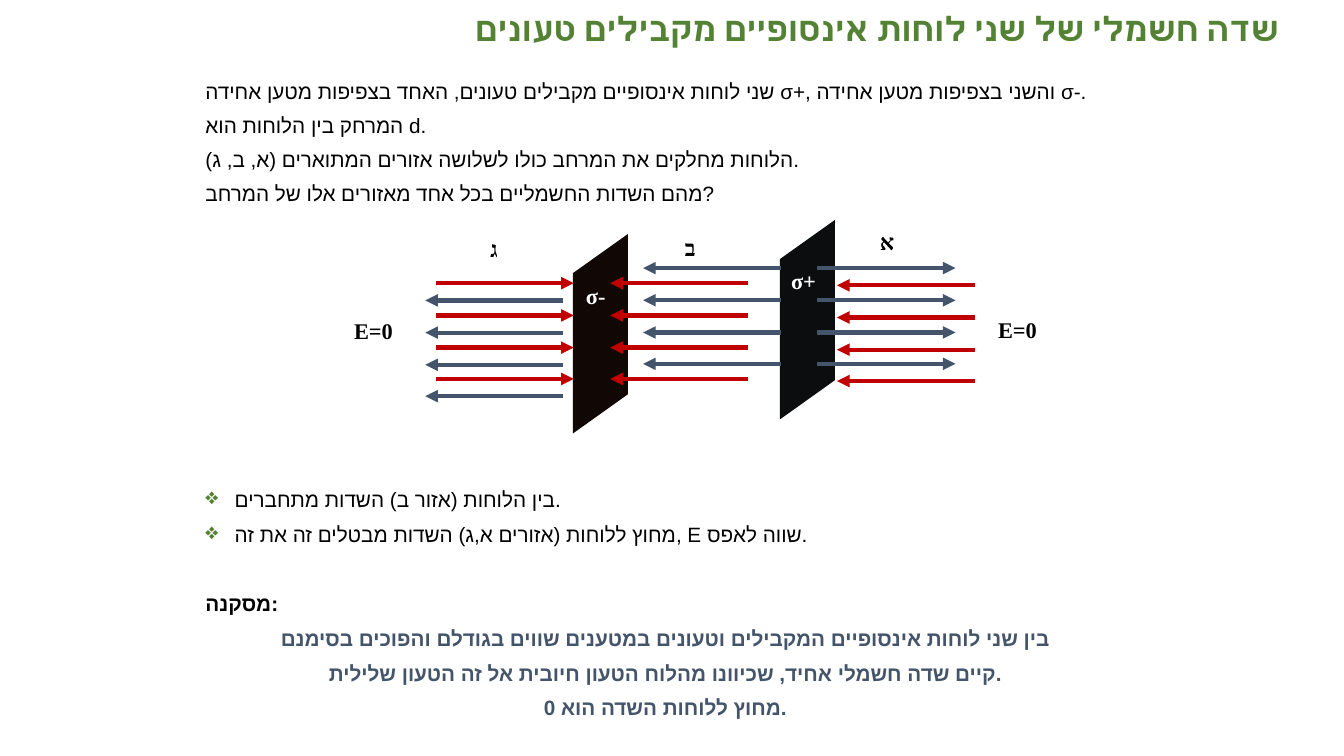
import pptx
import pptx.dml.color
import pptx.enum.shapes
import pptx.enum.text
import pptx.util
from dataclasses import dataclass
from lxml import etree
from pptx.oxml.ns import qn

Pt = pptx.util.Pt
ALIGN = pptx.enum.text.PP_ALIGN
ANCHOR = pptx.enum.text.MSO_ANCHOR


@dataclass(frozen=True)
class Theme:
    green: str = "548235"
    slate: str = "44546A"
    red: str = "C00000"
    black: str = "000000"
    white: str = "FFFFFF"
    positive_plate: str = "0B0D0F"
    negative_plate: str = "110806"
    title_font: str = "Calibri"
    body_font: str = "Arial"
    label_font: str = "Times New Roman"
    title_size: float = 24
    body_size: float = 14.8
    label_size: float = 16


THEME = Theme()

ARROW_LENGTH = 98.6
ARROW_ROWS = (0, 23, 46, 68.4)
PLATE_WIDTH, PLATE_HEIGHT, PLATE_RISE = 39.3, 114.5, 28

QUESTION = (
    "שני לוחות אינסופיים מקבילים טעונים, האחד בצפיפות מטען אחידה σ+, והשני בצפיפות מטען אחידה σ-.",
    "המרחק בין הלוחות הוא d.",
    "הלוחות מחלקים את המרחב כולו לשלושה אזורים המתוארים (א, ב, ג).",
    "מהם השדות החשמליים בכל אחד מאזורים אלו של המרחב?",
)
FINDINGS = (
    "בין הלוחות (אזור ב) השדות מתחברים.",
    "מחוץ ללוחות (אזורים א,ג) השדות מבטלים זה את זה, E שווה לאפס.",
)
CONCLUSIONS = (
    "בין שני לוחות אינסופיים המקבילים וטעונים במטענים שווים בגודלם והפוכים בסימנם",
    "קיים שדה חשמלי אחיד, שכיוונו מהלוח הטעון חיובית אל זה הטעון שלילית.",
    "מחוץ ללוחות השדה הוא 0.",
)

# left, top, colour, direction (1 points right, -1 points left)
FIELDS = (
    (583.9, 191.5, THEME.slate, 1),
    (459.4, 191.5, THEME.slate, -1),
    (303.8, 214.6, THEME.slate, -1),
    (435.9, 202.3, THEME.red, -1),
    (311.2, 202.3, THEME.red, 1),
    (597.8, 203.8, THEME.red, -1),
)

# text, left, top, width, height, colour
LABELS = (
    ("+σ", 535, 187.2, 77.8, 43.9, THEME.white),
    ("-σ", 386.6, 198, 77.8, 43.9, THEME.white),
    ("E=0", 696.2, 222.5, 61.2, 25.9, THEME.black),
    ("E=0", 241.9, 223.2, 49.7, 39.6, THEME.black),
    ("א", 614.2, 159.1, 38.9, 25.9, THEME.black),
    ("ב", 465.8, 163.4, 54.7, 44.6, THEME.black),
    ("ג", 333.4, 164.2, 38.9, 25.9, THEME.black),
)


def rgb(colour):
    return pptx.dml.color.RGBColor.from_string(colour)


def add_frame(slide, left, top, width, height, anchor=ANCHOR.TOP):
    box = slide.shapes.add_textbox(Pt(left), Pt(top), Pt(width), Pt(height))
    frame = box.text_frame
    frame.word_wrap = True
    frame.vertical_anchor = anchor
    return frame


def next_paragraph(frame):
    first = frame.paragraphs[0]
    return frame.add_paragraph() if first.runs else first


def write(frame, text, font, size, colour, bold=False, align=ALIGN.LEFT, spacing=1.0, before=0):
    paragraph = next_paragraph(frame)
    paragraph.alignment = align
    paragraph.line_spacing = spacing
    paragraph.space_before = Pt(before)
    run = paragraph.add_run()
    run.text = text
    run.font.name = font
    run.font.size = Pt(size)
    run.font.bold = bold
    run.font.color.rgb = rgb(colour)
    # Hebrew letters take their typeface from the complex-script entry.
    etree.SubElement(run.font._element, qn("a:cs"), typeface=font)
    return paragraph


def add_bullet(paragraph):
    properties = paragraph._p.get_or_add_pPr()
    properties.set("marL", str(Pt(20.9)))
    properties.set("indent", str(-Pt(20.9)))
    colour = etree.SubElement(properties, qn("a:buClr"))
    etree.SubElement(colour, qn("a:srgbClr"), val=THEME.green)
    etree.SubElement(properties, qn("a:buSzPct"), val="110000")
    etree.SubElement(properties, qn("a:buChar"), char="❖")


def add_title(slide):
    frame = add_frame(slide, 114.5, 7.9, 806.4, 28.1, ANCHOR.MIDDLE)
    write(frame, "שדה חשמלי של שני לוחות אינסופיים מקבילים טעונים", THEME.title_font,
          THEME.title_size, THEME.green, bold=True, align=ALIGN.RIGHT, spacing=0.9)


def add_body(slide):
    frame = add_frame(slide, 139.7, 56.2, 671, 475.2)

    def line(text, colour=THEME.black, **options):
        return write(frame, text, THEME.body_font, THEME.body_size, colour, **options)

    for text in QUESTION:
        line(text, spacing=0.8, before=10)
    for text, gap in zip(FINDINGS, (194, 0)):
        add_bullet(line(text, spacing=1.4, before=gap))
    line("מסקנה:", bold=True, spacing=1.4, before=24.8)
    for text in CONCLUSIONS:
        line(text, THEME.slate, bold=True, align=ALIGN.CENTER, spacing=1.4)


def add_plate(slide, left, top, colour):
    """Draw a slanted plate whose right edge is raised."""
    builder = slide.shapes.build_freeform(Pt(left), Pt(top + PLATE_RISE))
    right = left + PLATE_WIDTH
    corners = ((right, top), (right, top + PLATE_HEIGHT),
               (left, top + PLATE_RISE + PLATE_HEIGHT))
    builder.add_line_segments([(Pt(x), Pt(y)) for x, y in corners], close=True)
    plate = builder.convert_to_shape()
    plate.shadow.inherit = False
    plate.fill.solid()
    plate.fill.fore_color.rgb = rgb(colour)
    plate.line.fill.background()


def add_arrow(slide, start, end, y, colour):
    arrow = slide.shapes.add_connector(
        pptx.enum.shapes.MSO_CONNECTOR.STRAIGHT, Pt(start), Pt(y), Pt(end), Pt(y))
    arrow.line.color.rgb = rgb(colour)
    arrow.line.width = Pt(3)
    etree.SubElement(arrow.line._get_or_add_ln(), qn("a:tailEnd"), type="triangle")
    etree.SubElement(arrow._element.spPr, qn("a:effectLst"))


def add_field(slide, left, top, colour, direction):
    """Draw one column of parallel field arrows."""
    start, end = (left, left + ARROW_LENGTH)[::direction]
    for row in ARROW_ROWS:
        add_arrow(slide, start, end, top + row, colour)


def add_label(slide, text, left, top, width, height, colour):
    frame = add_frame(slide, left, top, width, height)
    paragraph = write(frame, text, THEME.label_font, THEME.label_size, colour,
                      bold=True, align=ALIGN.CENTER)
    paragraph._p.get_or_add_pPr().set("rtl", "1")


def main():
    presentation = pptx.Presentation()
    presentation.slide_width = Pt(960)
    presentation.slide_height = Pt(540)
    slide = presentation.slides.add_slide(presentation.slide_layouts[6])
    add_title(slide)
    add_body(slide)
    add_plate(slide, 557.1, 157.1, THEME.positive_plate)
    add_plate(slide, 409.3, 167.1, THEME.negative_plate)
    for field in FIELDS:
        add_field(slide, *field)
    for label in LABELS:
        add_label(slide, *label)
    presentation.save("out.pptx")


if __name__ == "__main__":
    main()
